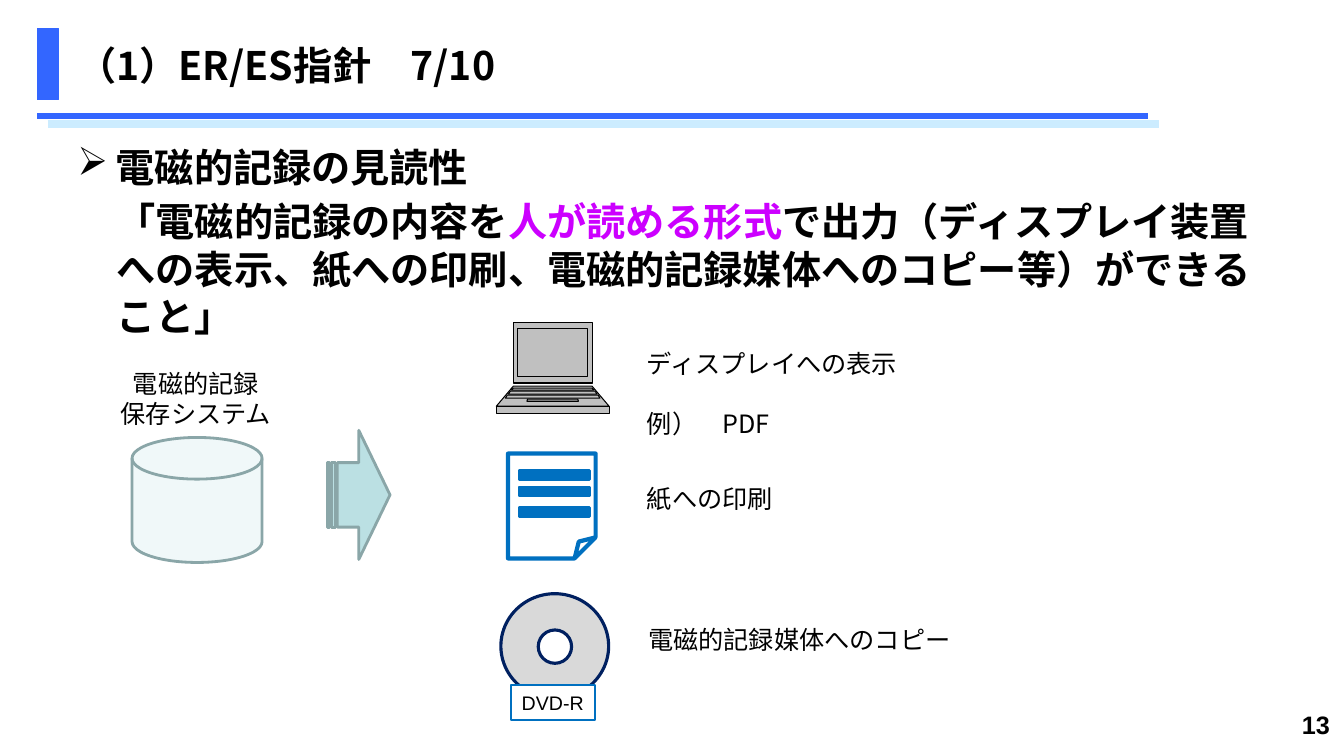
"""Build the slide on human-readable output of electronic records."""
from lxml.etree import SubElement
from pptx import Presentation
from pptx.dml.color import RGBColor
from pptx.enum.shapes import MSO_CONNECTOR, MSO_SHAPE
from pptx.enum.text import MSO_ANCHOR, PP_ALIGN
from pptx.oxml.ns import qn
from pptx.util import Pt

BLACK = RGBColor(0x00, 0x00, 0x00)
WHITE = RGBColor(0xFF, 0xFF, 0xFF)
BAR_BLUE = RGBColor(0x33, 0x66, 0xFF)
PALE_BLUE = RGBColor(0xCC, 0xEC, 0xFF)
MAGENTA = RGBColor(0xCC, 0x00, 0xFF)
LAPTOP_GREY = RGBColor(0xC0, 0xC0, 0xC0)
DISC_GREY = RGBColor(0xD9, 0xD9, 0xD9)
NAVY = RGBColor(0x00, 0x20, 0x60)
PAPER_BLUE = RGBColor(0x00, 0x70, 0xC0)
STORE_FILL = RGBColor(0xF0, 0xF8, 0xF9)
ARROW_FILL = RGBColor(0xBB, 0xE0, 0xE3)
TEAL = RGBColor(0x8A, 0xA6, 0xA8)
JAPANESE = "Noto Sans CJK JP"
LATIN = "Arial"

LAPTOP_CENTER = 394.8
LAPTOP_PARTS = [
    (28.1, 28.1, 230.4, 273.6),
    (28.1, 40.3, 275.8, 290.2),
    (40.3, 40.3, 290.2, 295.2),
    (24.8, 24.8, 234.7, 268.6),
    (28.1, 29.5, 277.2, 278.6),
    (18, 18.4, 285.1, 286.6),
    (30.2, 31.7, 279.4, 281.5),
    (32.4, 33.8, 282.2, 284.4),
]


def format_paragraph(paragraph, size, name=JAPANESE, bold=False):
    """Set the font of a paragraph for Latin and Japanese text."""
    font = paragraph.font
    font.size, font.name, font.bold = Pt(size), name, bold
    font.color.rgb = BLACK
    properties = paragraph._p.get_or_add_pPr().find(qn("a:defRPr"))
    SubElement(properties, qn("a:ea")).set("typeface", JAPANESE)


def add_text(slide, box, lines, size=18, name=JAPANESE, bold=False,
             align=PP_ALIGN.LEFT, gap=0, pitch=None):
    """Add a text box with one paragraph for each line."""
    frame = slide.shapes.add_textbox(*map(Pt, box)).text_frame
    frame.word_wrap = True
    for index, line in enumerate(lines):
        paragraph = frame.add_paragraph() if index else frame.paragraphs[0]
        paragraph.text = line
        paragraph.alignment = align
        if pitch:
            paragraph.line_spacing = Pt(pitch)
        if index and gap:
            paragraph.space_before = Pt(gap)
        format_paragraph(paragraph, size, name, bold)
    return frame


def paint(shape, fill, line, width):
    """Give a shape its fill and outline and take away its shadow."""
    shape.shadow.inherit = False
    if fill is None:
        shape.fill.background()
    else:
        shape.fill.solid()
        shape.fill.fore_color.rgb = fill
    shape.line.color.rgb = line
    shape.line.width = Pt(width)


def add_shape(slide, kind, box, fill, line, width):
    """Add a painted preset shape."""
    shape = slide.shapes.add_shape(kind, *map(Pt, box))
    paint(shape, fill, line, width)
    return shape


def add_rule(slide, left, right, top, color, width):
    """Add a horizontal rule."""
    rule = slide.shapes.add_connector(
        MSO_CONNECTOR.STRAIGHT, Pt(left), Pt(top), Pt(right), Pt(top))
    rule.line.color.rgb = color
    rule.line.width = Pt(width)
    SubElement(rule._element.spPr, qn("a:effectLst"))


def add_header(slide):
    """Format the title and draw the bar and rules around it."""
    add_rule(slide, 26.6, 820, 82.8, BAR_BLUE, 4.5)
    add_shape(slide, MSO_SHAPE.RECTANGLE, (26.6, 20.2, 15.1, 51.1), BAR_BLUE, BAR_BLUE, 0.75)
    add_rule(slide, 34, 828, 88.6, PALE_BLUE, 6)
    title = slide.shapes.title
    title.left, title.top, title.width, title.height = map(Pt, (48.2, 15.1, 864, 62.6))
    frame = title.text_frame
    frame.text = "（1）ER/ES指針　7/10"
    frame.vertical_anchor = MSO_ANCHOR.MIDDLE
    frame.paragraphs[0].alignment = PP_ALIGN.LEFT
    format_paragraph(frame.paragraphs[0], 28, bold=True)


def add_body(slide):
    """Add the bulleted heading and the quoted requirement."""
    frame = slide.shapes.add_textbox(*map(Pt, (48.2, 98.6, 862.6, 150))).text_frame
    frame.word_wrap = True
    heading, quote = frame.paragraphs[0], frame.add_paragraph()
    heading.text = "電磁的記録の見読性"
    for text in ("「電磁的記録の内容を", "人が読める形式",
                 "で出力（ディスプレイ装置への表示、紙への印刷、"
                 "電磁的記録媒体へのコピー等）ができること」"):
        quote.add_run().text = text
    quote.runs[1].font.color.rgb = MAGENTA
    quote.space_before = Pt(5.6)
    for paragraph, margin, indent in ((heading, 27.4, -27.4), (quote, 28.1, 0)):
        paragraph.line_spacing = Pt(33.6)
        properties = paragraph._p.get_or_add_pPr()
        properties.set("marL", str(Pt(margin)))
        properties.set("indent", str(Pt(indent)))
        if indent:
            SubElement(properties, qn("a:buChar")).set("char", "➢")
        format_paragraph(paragraph, 28, bold=True)


def add_laptop(slide):
    """Draw a laptop from trapezoids around one centre line."""
    for half_top, half_bottom, top, bottom in LAPTOP_PARTS:
        builder = slide.shapes.build_freeform(
            Pt(LAPTOP_CENTER - half_top), Pt(top))
        builder.add_line_segments([
            (Pt(LAPTOP_CENTER + half_top), Pt(top)),
            (Pt(LAPTOP_CENTER + half_bottom), Pt(bottom)),
            (Pt(LAPTOP_CENTER - half_bottom), Pt(bottom))])
        paint(builder.convert_to_shape(), LAPTOP_GREY, BLACK, 0.75)


def add_paper(slide):
    """Draw a printed sheet with three lines."""
    sheet = add_shape(slide, MSO_SHAPE.FOLDED_CORNER, (362.9, 324, 62.6, 74.9),
                      None, PAPER_BLUE, 3)
    guides = sheet._element.spPr.find(qn("a:prstGeom")).get_or_add_avLst()
    fold = SubElement(guides, qn("a:gd"))
    fold.set("name", "adj")
    fold.set("fmla", "val 24000")
    for top in (336.2, 347.8, 362.2):
        add_shape(slide, MSO_SHAPE.RECTANGLE, (370.8, top, 50.4, 6.5),
                  PAPER_BLUE, PAPER_BLUE, 2)


def add_disc(slide):
    """Draw a disc with its label."""
    add_shape(slide, MSO_SHAPE.OVAL, (357.8, 424.1, 77, 74.9), DISC_GREY, NAVY, 2.25)
    add_shape(slide, MSO_SHAPE.OVAL, (384.5, 450, 23.8, 23.8), WHITE, NAVY, 2.25)
    label = add_shape(slide, MSO_SHAPE.RECTANGLE, (365, 489.6, 59.8, 24.5),
                      WHITE, PAPER_BLUE, 1.5)
    frame = label.text_frame
    frame.word_wrap = False
    frame.text = "DVD-R"
    frame.paragraphs[0].alignment = PP_ALIGN.CENTER
    format_paragraph(frame.paragraphs[0], 14, LATIN)


def main():
    """Build and save the slide."""
    presentation = Presentation()
    presentation.slide_width, presentation.slide_height = Pt(960), Pt(540)
    slide = presentation.slides.add_slide(presentation.slide_layouts[5])
    add_header(slide)
    add_body(slide)
    add_text(slide, (455, 245.5, 204, 72), ["ディスプレイへの表示", "例）　PDF"],
             gap=21.5, pitch=21.5)
    add_text(slide, (455, 342, 204, 28.8), ["紙への印刷"], pitch=21.5)
    add_laptop(slide)
    add_disc(slide)
    add_shape(slide, MSO_SHAPE.FLOWCHART_MAGNETIC_DISK, (94.3, 312.5, 92.9, 89.3),
              STORE_FILL, TEAL, 2)
    add_shape(slide, MSO_SHAPE.STRIPED_RIGHT_ARROW, (234, 307.4, 44.6, 92.2),
              ARROW_FILL, TEAL, 2)
    add_text(slide, (455.8, 442.8, 264, 28.8), ["電磁的記録媒体へのコピー"], pitch=21.5)
    add_text(slide, (69.1, 259.9, 141.8, 51.1), ["電磁的記録", "保存システム"],
             name=LATIN, align=PP_ALIGN.CENTER, pitch=21.5)
    add_paper(slide)
    number = add_text(slide, (864.7, 499, 92.2, 37.4), ["13"], name=LATIN, bold=True,
                      align=PP_ALIGN.RIGHT)
    number.vertical_anchor = MSO_ANCHOR.MIDDLE
    presentation.save("out.pptx")


if __name__ == "__main__":
    main()
